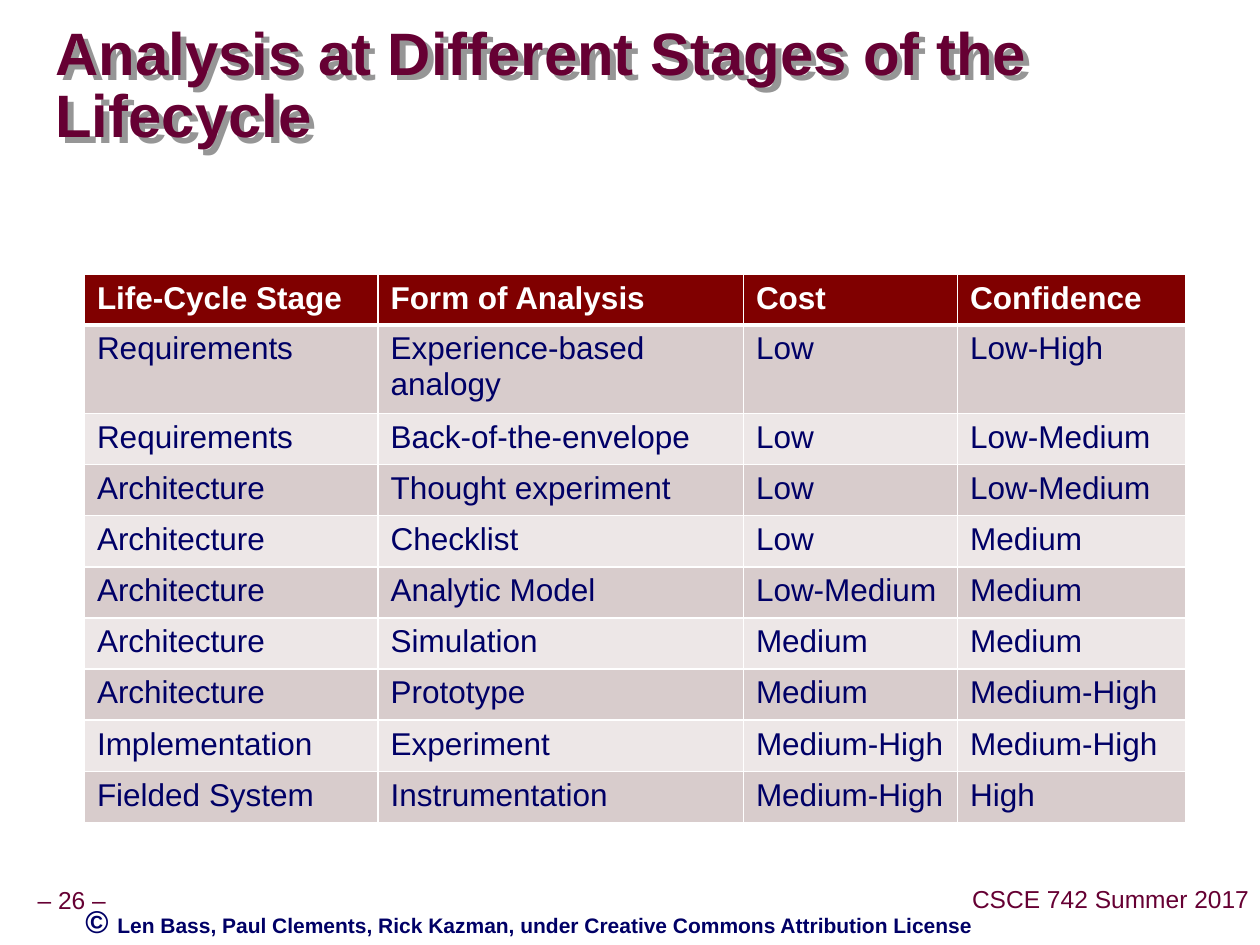
import pptx
import pptx.util
import pptx.dml.color
import pptx.enum.text
import pptx.oxml
import pptx.oxml.ns
from lxml import etree

COLORS = {"plum": "660033", "navy": "000066", "white": "FFFFFF", "header": "800000",
          "band_dark": "D8CCCC", "band_light": "EDE7E7", "shadow": "969696"}
ANCHOR = pptx.enum.text.MSO_ANCHOR
ALIGN = pptx.enum.text.PP_ALIGN
AUTO_SIZE = pptx.enum.text.MSO_AUTO_SIZE


def unit(count):
    """Length of grid units: the slide is 100 columns by 75 rows."""
    return pptx.util.Inches(count / 10)


class SlideBuilder:
    font = "Arial"

    def __init__(self):
        self.deck = pptx.Presentation()
        self.deck.slide_width, self.deck.slide_height = unit(100), unit(75)
        self.slide = self.deck.slides.add_slide(self.deck.slide_layouts[5])

    def color(self, name):
        return pptx.dml.color.RGBColor.from_string(COLORS[name])

    def add_run(self, paragraph, text, size, color, bold=False):
        run = paragraph.add_run()
        run.text = text
        run.font.name, run.font.size, run.font.bold = self.font, pptx.util.Pt(size), bold
        run.font.color.rgb = self.color(color)

    def set_insets(self, frame, inset):
        frame.margin_left = frame.margin_right = unit(inset)
        frame.margin_top = frame.margin_bottom = unit(inset)

    def title(self, text, left, top, width, height):
        heading = self.slide.shapes.title
        heading.left, heading.top = unit(left), unit(top)
        heading.width, heading.height = unit(width), unit(height)
        frame = heading.text_frame
        frame.word_wrap, frame.auto_size = True, AUTO_SIZE.NONE
        frame.vertical_anchor = ANCHOR.MIDDLE
        self.set_insets(frame, 0)
        paragraph = frame.paragraphs[0]
        paragraph.alignment, paragraph.line_spacing = ALIGN.LEFT, 0.87
        self.add_run(paragraph, text, 34.2, "plum", bold=True)
        # Drop shadow behind the letters
        heading.element.spPr.append(pptx.oxml.parse_xml(
            f'<a:effectLst {pptx.oxml.ns.nsdecls("a")}>'
            '<a:outerShdw dist="57150" dir="2700000" algn="ctr" rotWithShape="0">'
            f'<a:srgbClr val="{COLORS["shadow"]}"/></a:outerShdw></a:effectLst>'))

    def text_box(self, left, top, width, height):
        box = self.slide.shapes.add_textbox(unit(left), unit(top), unit(width), unit(height))
        box.text_frame.word_wrap = True
        return box.text_frame

    def page_label(self, text, left, top, width):
        frame = self.text_box(left, top, width, 3.1)
        frame.word_wrap, frame.auto_size = False, AUTO_SIZE.SHAPE_TO_FIT_TEXT
        frame.vertical_anchor = ANCHOR.MIDDLE
        self.set_insets(frame, 0.5)
        paragraph = frame.paragraphs[0]
        paragraph.alignment, paragraph.line_spacing = ALIGN.CENTER, 0.9
        self.add_run(paragraph, text, 14, "plum")

    def credit(self, runs, left, top, width, height):
        paragraph = self.text_box(left, top, width, height).paragraphs[0]
        for text, size in runs:
            self.add_run(paragraph, text, size, "navy", bold=True)

    def cell_borders(self, cell, widths):
        properties = cell._tc.get_or_add_tcPr()
        for position, (side, width) in enumerate(widths.items()):
            line = pptx.oxml.parse_xml(
                f'<a:ln{side} {pptx.oxml.ns.nsdecls("a")} w="{pptx.util.Pt(width)}">'
                f'<a:solidFill><a:srgbClr val="{COLORS["white"]}"/></a:solidFill></a:ln{side}>')
            properties.insert(position, line)

    def table(self, records, left, top, columns, rows):
        grid = self.slide.shapes.add_table(
            len(rows), len(columns), unit(left), unit(top),
            unit(sum(columns)), unit(sum(rows))).table
        for column, width in zip(grid.columns, columns):
            column.width = unit(width)
        for r, (row, height, record) in enumerate(zip(grid.rows, rows, records)):
            row.height = unit(height)
            is_header = r == 0
            band = "header" if is_header else ("band_light", "band_dark")[r % 2]
            borders = {"L": 1, "R": 1, "T": 3 if r == 1 else 1, "B": 3 if is_header else 1}
            for cell, text in zip(row.cells, record):
                cell.fill.solid()
                cell.fill.fore_color.rgb = self.color(band)
                self.cell_borders(cell, borders)
                self.add_run(cell.text_frame.paragraphs[0], text, 18,
                             "white" if is_header else "navy", bold=is_header)


ANALYSES = [
    ("Life-Cycle Stage", "Form of Analysis", "Cost", "Confidence"),
    ("Requirements", "Experience-based analogy", "Low", "Low-High"),
    ("Requirements", "Back-of-the-envelope", "Low", "Low-Medium"),
    ("Architecture", "Thought experiment", "Low", "Low-Medium"),
    ("Architecture", "Checklist", "Low", "Medium"),
    ("Architecture", "Analytic Model", "Low-Medium", "Medium"),
    ("Architecture", "Simulation", "Medium", "Medium"),
    ("Architecture", "Prototype", "Medium", "Medium-High"),
    ("Implementation", "Experiment", "Medium-High", "Medium-High"),
    ("Fielded System", "Instrumentation", "Medium-High", "High"),
]


def main():
    builder = SlideBuilder()

    # Page number and course
    builder.page_label("– 26 –", 2.4, 70, 6.6)
    builder.page_label("CSCE 742 Summer 2017", 76.6, 69.9, 23.1)

    # Heading
    builder.title("Analysis at Different Stages of the Lifecycle", 4.4, 2.7, 95.3, 8.5)

    # Forms of analysis by stage
    builder.table(ANALYSES, 6.7, 21.8, columns=[23.3, 29, 17, 18.1],
                  rows=[4, 7] + [4.06] * 8)

    # Copyright line
    builder.credit([("© ", 18), ("Len Bass, Paul Clements, Rick Kazman, under Creative Commons "
                                 "Attribution License", 12)], 5.8, 71.1, 73.3, 3.1)

    builder.deck.save("out.pptx")


if __name__ == "__main__":
    main()
